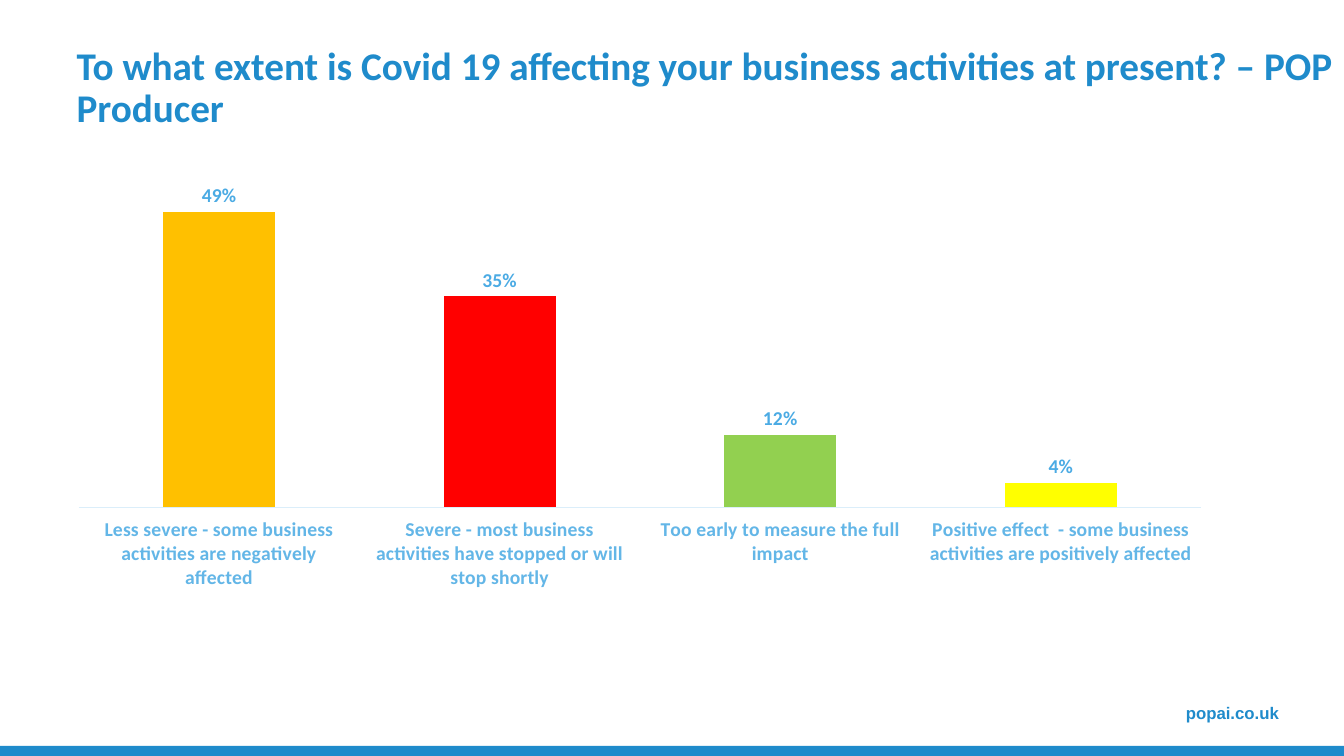
from lxml.etree import SubElement
from pptx import Presentation
from pptx.chart.data import CategoryChartData
from pptx.dml.color import RGBColor
from pptx.enum.chart import XL_CHART_TYPE as ChartType
from pptx.enum.chart import XL_LABEL_POSITION as LabelPos
from pptx.enum.chart import XL_TICK_LABEL_POSITION as TickLabelPos
from pptx.enum.chart import XL_TICK_MARK as TickMark
from pptx.enum.shapes import MSO_SHAPE as Shape
from pptx.enum.text import MSO_ANCHOR as Anchor
from pptx.enum.text import MSO_AUTO_SIZE as AutoSize
from pptx.enum.text import PP_ALIGN as Align
from pptx.oxml.ns import qn
from pptx.util import Pt

TITLE = "To what extent is Covid 19 affecting your business activities at present? – POP Producer"
SITE = "popai.co.uk"
ANSWERS = [
    ("Less severe - some business activities are negatively affected", 0.49, "FFC000"),
    ("Severe - most business activities have stopped or will stop shortly", 0.35, "FF0000"),
    ("Too early to measure the full impact", 0.12, "92D050"),
    ("Positive effect  - some business activities are positively affected", 0.04, "FFFF00"),
]
BLUE, LABEL_BLUE, AXIS_BLUE, LINE_BLUE = "1F8BCB", "4BABE4", "63B6E7", "DBEEFA"
PLOT = {"x": 0.002, "y": 0.008, "w": 0.988, "h": 0.73}
W, H, BAND = 960, 540, 7.2


def rgb(color):
    return RGBColor.from_string(color)


def set_font(font, size, color, name="Calibri", bold=True):
    font.size, font.name, font.bold = Pt(size), name, bold
    font.color.rgb = rgb(color)


def write(sp, text, left, top, width, height, size, name="Calibri", align=Align.LEFT, spacing=1.0):
    sp.left, sp.top, sp.width, sp.height = Pt(left), Pt(top), Pt(width), Pt(height)
    tf = sp.text_frame
    tf.word_wrap, tf.auto_size, tf.vertical_anchor = True, AutoSize.NONE, Anchor.TOP
    tf.margin_left = tf.margin_right = Pt(7.2)
    tf.margin_top = tf.margin_bottom = Pt(3.6)
    p = tf.paragraphs[0]
    p.alignment, p.line_spacing = align, spacing
    r = p.add_run()
    r.text = text
    set_font(r.font, size, BLUE, name)


def place_plot(chart):
    area = chart._chartSpace.chart.plotArea
    for old in area.findall(qn("c:layout")):
        area.remove(old)
    layout = area.makeelement(qn("c:layout"))
    area.insert(0, layout)
    manual = SubElement(layout, qn("c:manualLayout"))
    modes = {"layoutTarget": "inner", "xMode": "edge", "yMode": "edge"}
    for tag, value in {**modes, **PLOT}.items():
        SubElement(manual, qn("c:" + tag)).set("val", str(value))


def add_answers(s):
    data = CategoryChartData(number_format="0%")
    data.categories = [answer for answer, _, _ in ANSWERS]
    data.add_series("Series 1", [share for _, share, _ in ANSWERS])
    frame = s.shapes.add_chart(
        ChartType.COLUMN_CLUSTERED, Pt(54.7), Pt(101.5), Pt(811.4), Pt(353.5), data)
    chart = frame.chart
    chart.has_legend = chart.has_title = False
    set_font(chart.font, 10, BLUE, bold=False)
    place_plot(chart)

    cat = chart.category_axis
    cat.major_tick_mark = cat.minor_tick_mark = TickMark.NONE
    cat.tick_label_position = TickLabelPos.LOW
    cat.format.line.color.rgb = rgb(LINE_BLUE)
    cat.format.line.width = Pt(0.75)
    set_font(cat.tick_labels.font, 14, AXIS_BLUE)

    val = chart.value_axis
    val.visible = val.has_major_gridlines = False
    val.minimum_scale, val.maximum_scale = 0, 0.6

    plot = chart.plots[0]
    plot.gap_width, plot.overlap, plot.vary_by_categories = 150, -25, False
    series = plot.series[0]
    series.format.fill.solid()
    series.format.fill.fore_color.rgb = rgb(BLUE)
    for i, (_, _, color) in enumerate(ANSWERS):
        fill = series.points[i].format.fill
        fill.solid()
        fill.fore_color.rgb = rgb(color)

    plot.has_data_labels = True
    labels = plot.data_labels
    labels.show_value, labels.position = True, LabelPos.OUTSIDE_END
    labels.number_format, labels.number_format_is_linked = "0%", False
    set_font(labels.font, 14, LABEL_BLUE)


def main():
    prs = Presentation()
    prs.slide_width, prs.slide_height = Pt(W), Pt(H)
    s = prs.slides.add_slide(prs.slide_layouts[5])

    band = s.shapes.add_shape(Shape.RECTANGLE, 0, Pt(H - BAND), Pt(W), Pt(BAND))
    band.shadow.inherit = False
    band.fill.solid()
    band.fill.fore_color.rgb = rgb(BLUE)
    band.line.fill.background()

    write(s.shapes.add_textbox(0, 0, 0, 0), SITE, 732.2, 498.2, 188.6, 21.6, 12,
          name="Arial", align=Align.RIGHT)
    write(s.shapes.title, TITLE, 47.5, 29.5, 912.5, 41, 28, spacing=0.9)
    add_answers(s)
    prs.save("out.pptx")


if __name__ == "__main__":
    main()
